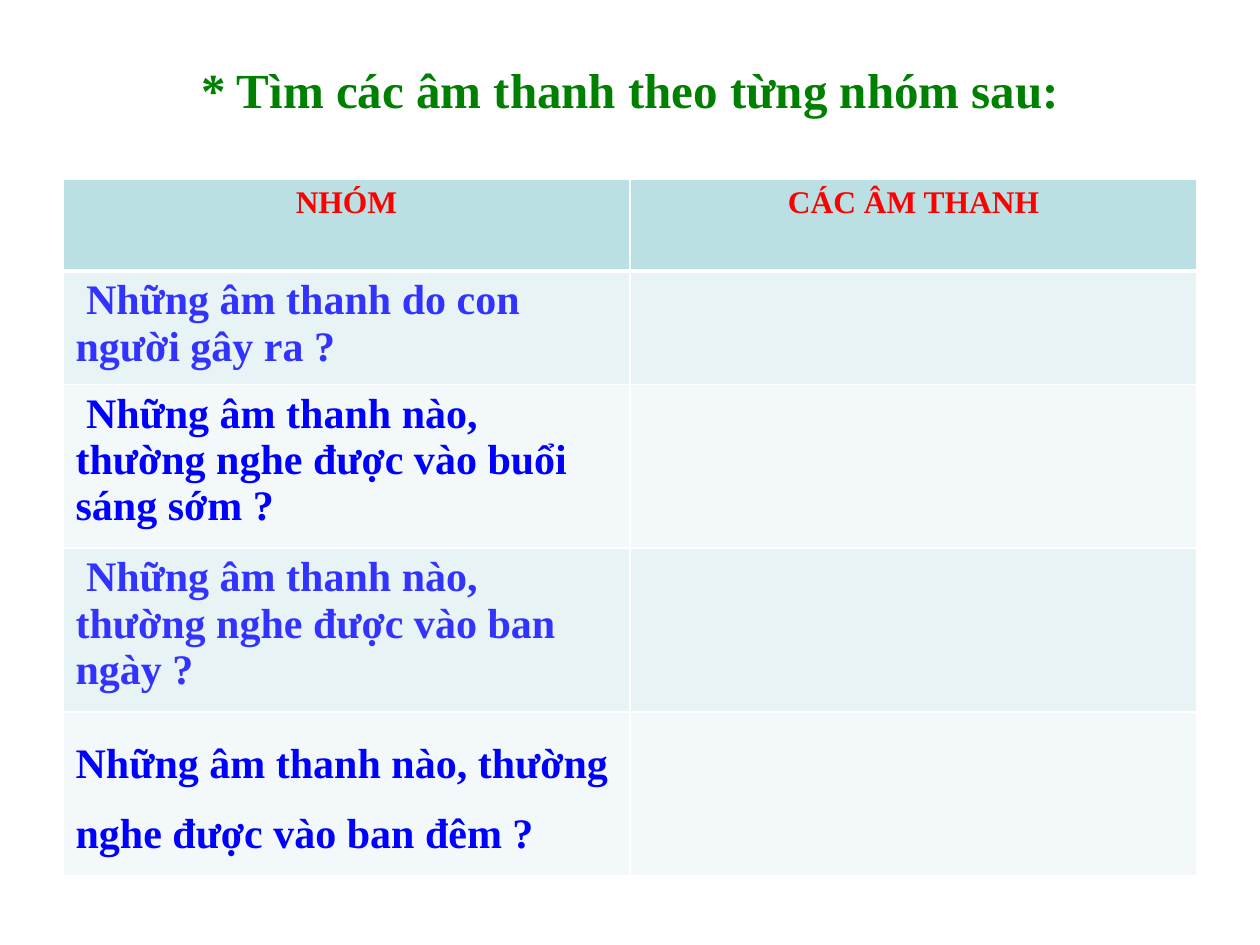
from lxml.etree import SubElement
from pptx import Presentation
from pptx.dml.color import RGBColor
from pptx.enum.text import MSO_ANCHOR, PP_ALIGN
from pptx.oxml.ns import qn
from pptx.util import Inches, Pt

W, H = 10, 7.5
MARGIN = W / 20
HEADERS = ["NHÓM", "CÁC ÂM THANH"]
GROUPS = [
    " Những âm thanh do con người gây ra ?",
    " Những âm thanh nào, thường nghe được vào buổi sáng sớm ?",
    " Những âm thanh nào, thường nghe được vào ban ngày ?",
    "Những âm thanh nào, thường nghe được vào ban đêm ?",
]
ROW_HEIGHTS = [0.73, 0.9, 1.3, 1.3, 1.3]
BANDS = [("E7F3F4", "3333FF"), ("F3F9FA", "0000FF")]


def rgb(value):
    """Turn a hex string into a colour."""
    return RGBColor.from_string(value)


def write(tf, text, size, color, align=PP_ALIGN.LEFT, spacing=None):
    """Write one bold formatted paragraph into a text frame."""
    p = tf.paragraphs[0]
    p.alignment = align
    if spacing:
        p.line_spacing = spacing
    r = p.add_run()
    r.text = text
    r.font.name = "Times New Roman"
    r.font.size = Pt(size)
    r.font.bold = True
    r.font.color.rgb = rgb(color)


def style_cell(cell, fill, top=1, bottom=1):
    """Give a cell white borders of the given widths and a solid fill."""
    tcPr = cell._tc.get_or_add_tcPr()
    for side, width in zip("LRTB", (1, 1, top, bottom)):
        ln = SubElement(tcPr, qn(f"a:ln{side}"), w=str(Pt(width)))
        SubElement(SubElement(ln, qn("a:solidFill")), qn("a:srgbClr"), val="FFFFFF")
    cell.fill.solid()
    cell.fill.fore_color.rgb = rgb(fill)


def add_title(s, box, text):
    """Place the centred heading in its box."""
    tf = s.shapes.add_textbox(*map(Inches, box)).text_frame
    tf.word_wrap = True
    tf.vertical_anchor = MSO_ANCHOR.MIDDLE
    write(tf, text, 28, "008000", PP_ALIGN.CENTER)


def add_sound_table(s, box):
    """Place the table of sound groups in its box."""
    frame = s.shapes.add_table(len(ROW_HEIGHTS), len(HEADERS), *map(Inches, box))
    table = frame.table
    for row, height in zip(table.rows, ROW_HEIGHTS):
        row.height = Inches(box[3] * height / sum(ROW_HEIGHTS))
    for c, header in enumerate(HEADERS):
        cell = table.cell(0, c)
        style_cell(cell, "BBE0E3", bottom=3)
        write(cell.text_frame, header, 18, "FF0000", PP_ALIGN.CENTER)
    for i, group in enumerate(GROUPS, 1):
        fill, color = BANDS[(i - 1) % 2]
        for cell in table.rows[i].cells:
            style_cell(cell, fill, top=3 if i == 1 else 1)
        spacing = 1.5 if i == len(GROUPS) else None
        write(table.cell(i, 0).text_frame, group, 24, color, spacing=spacing)


def main():
    """Build the slide and save it."""
    prs = Presentation()
    prs.slide_width, prs.slide_height = Inches(W), Inches(H)
    s = prs.slides.add_slide(prs.slide_layouts[6])
    width = W - 2 * MARGIN
    add_title(s, (MARGIN, 0.08, width, H / 6), "* Tìm các âm thanh theo từng nhóm sau:")
    add_sound_table(s, (MARGIN, 1.42, width, sum(ROW_HEIGHTS)))
    prs.save("out.pptx")


if __name__ == "__main__":
    main()
